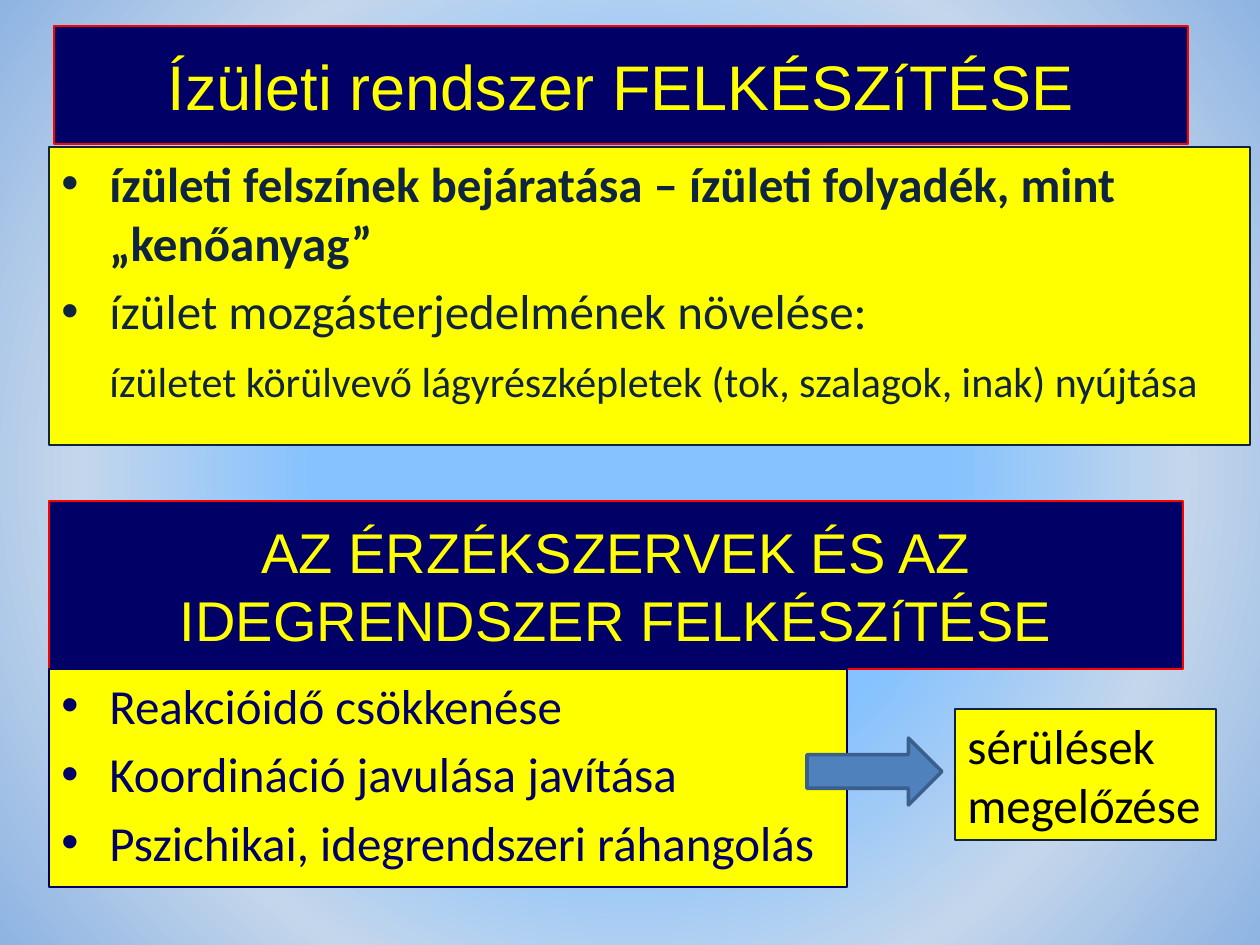
from lxml.etree import SubElement
from pptx import Presentation
from pptx.dml.color import RGBColor
from pptx.enum.shapes import MSO_SHAPE
from pptx.enum.text import MSO_ANCHOR, MSO_AUTO_SIZE, PP_ALIGN
from pptx.oxml.ns import qn
from pptx.util import Emu, Pt

PX_PER_INCH = 126
NAVY, YELLOW, RED, INK = "000066", "FFFF00", "FF0000", "0F243E"


def px(length):
    """Turn pixels into EMU."""
    return Emu(round(length * 914400 / PX_PER_INCH))


def color(value):
    """Turn a hex string into a colour."""
    return RGBColor.from_string(value)


def write(para, text, font="Calibri", size=28, ink=INK, bold=False, align=PP_ALIGN.LEFT,
          before=0, indent=0, bullet=False):
    """Fill a paragraph with formatted text."""
    span = para.add_run()
    span.text = text
    span.font.name, span.font.size, span.font.bold = font, Pt(size), bold
    span.font.color.rgb = color(ink)
    para.alignment, para.space_before = align, Pt(before)
    properties = para._p.get_or_add_pPr()
    properties.set("marL", str(px(indent)))
    properties.set("indent", str(-px(indent) if bullet else 0))
    if bullet:
        SubElement(properties, qn("a:buFont"), typeface="Arial")
        SubElement(properties, qn("a:buChar"), char="•")
    else:
        SubElement(properties, qn("a:buNone"))


class SlideBuilder:
    """Hold the style and the current slide."""

    def __init__(self, slide):
        """Keep the slide and the shared list format."""
        self.slide = slide
        self.item = dict(before=5.6, indent=48, bullet=True)

    def background(self, stops):
        """Paint a circular gradient from the centre."""
        self.slide.background.fill.gradient()
        gradient = self.slide._element.find(".//" + qn("a:gradFill"))
        for child in list(gradient):
            gradient.remove(child)
        stop_list = SubElement(gradient, qn("a:gsLst"))
        for position, value in stops:
            stop = SubElement(stop_list, qn("a:gs"), pos=str(position * 1000))
            SubElement(stop, qn("a:srgbClr"), val=value)
        circle = SubElement(gradient, qn("a:path"), path="circle")
        SubElement(circle, qn("a:fillToRect"), l="50000", t="50000", r="50000", b="50000")

    def paint(self, shape, fill, line, width=0.75):
        """Set the fill and outline of a shape."""
        shape.fill.solid()
        shape.fill.fore_color.rgb = color(fill)
        shape.line.color.rgb = color(line)
        shape.line.width = Pt(width)

    def banner(self, shape, text, size):
        """Format a shape as a navy heading."""
        self.paint(shape, NAVY, RED)
        frame = shape.text_frame
        frame.word_wrap, frame.auto_size = True, MSO_AUTO_SIZE.NONE
        frame.vertical_anchor = MSO_ANCHOR.MIDDLE
        write(frame.paragraphs[0], text, font="Arial", size=size, ink=YELLOW, align=PP_ALIGN.CENTER)

    def title(self, bounds, text):
        """Place the title placeholder."""
        shape = self.slide.shapes.title
        shape.left, shape.top, shape.width, shape.height = map(px, bounds)
        self.banner(shape, text, 36)

    def heading(self, bounds, text):
        """Add a second heading."""
        self.banner(self.slide.shapes.add_textbox(*map(px, bounds)), text, 32)

    def panel(self, bounds, lines, line=INK, wrap=True):
        """Add a yellow box of (text, format) lines."""
        box = self.slide.shapes.add_textbox(*map(px, bounds))
        self.paint(box, YELLOW, line)
        frame = box.text_frame
        frame.word_wrap = wrap
        frame.auto_size = MSO_AUTO_SIZE.NONE if wrap else MSO_AUTO_SIZE.SHAPE_TO_FIT_TEXT
        for index, (text, style) in enumerate(lines):
            para = frame.add_paragraph() if index else frame.paragraphs[0]
            write(para, text, **style)

    def arrow(self, bounds):
        """Add a block arrow pointing right."""
        shape = self.slide.shapes.add_shape(MSO_SHAPE.RIGHT_ARROW, *map(px, bounds))
        shape.shadow.inherit = False
        self.paint(shape, "4F81BD", "3A5F8C", 2)


def main():
    """Build and save the slide."""
    deck = Presentation()
    deck.slide_width, deck.slide_height = px(1260), px(945)
    page = SlideBuilder(deck.slides.add_slide(deck.slide_layouts[5]))
    page.background([(40, "85C2FF"), (70, "C4D6EB"), (100, "8EB4E3"), (100, "FFEBFA")])
    page.title((54, 26, 1134, 118), "Ízületi rendszer FELKÉSZíTÉSE")
    page.panel((49, 147, 1201, 298), [
        ("ízületi felszínek bejáratása – ízületi folyadék, mint „kenőanyag”", dict(page.item, bold=True)),
        ("ízület mozgásterjedelmének növelése:", page.item),
        ("ízületet körülvevő lágyrészképletek (tok, szalagok, inak) nyújtása",
         dict(size=24, before=9.4, indent=48)),
    ])
    page.heading((49, 501, 1134, 168), "AZ ÉRZÉKSZERVEK ÉS AZ IDEGRENDSZER FELKÉSZíTÉSE")
    goals = ("Reakcióidő csökkenése", "Koordináció javulása javítása", "Pszichikai, idegrendszeri ráhangolás")
    page.panel((49, 669, 798, 218), [(goal, dict(page.item, ink=NAVY)) for goal in goals], line=NAVY)
    page.arrow((807, 738, 135, 67))
    page.panel((955, 709, 261, 131), [(word, dict(ink="000000")) for word in ("sérülések", "megelőzése")],
               wrap=False)
    deck.save("out.pptx")


if __name__ == "__main__":
    main()
